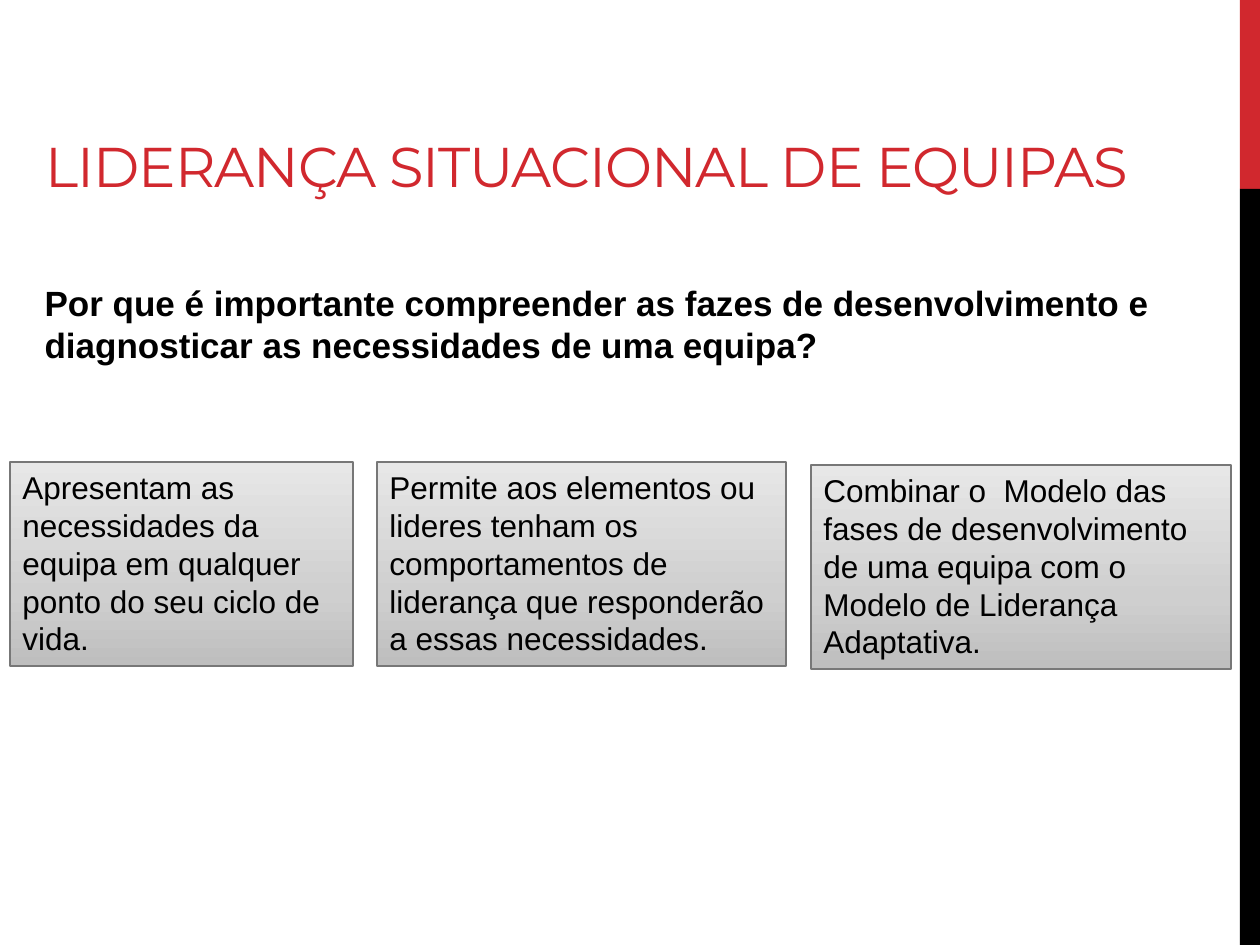
from copy import deepcopy

from pptx import Presentation, util as u
from pptx.dml.color import RGBColor
from pptx.enum import shapes, text as t
from pptx.oxml.ns import qn

PX = u.Inches(1) // 126

RED = RGBColor(0xD1, 0x28, 0x2E)
BLACK = RGBColor(0, 0, 0)
BORDER = RGBColor(0x77, 0x77, 0x77)
GRADIENT = (
    (0, RGBColor(0xBE, 0xBE, 0xBE)),
    (0.35, RGBColor(0xCF, 0xCF, 0xCF)),
    (1, RGBColor(0xE7, 0xE7, 0xE7)),
)

REASONS = (
    ((10, 462, 343, 204),
     "Apresentam as necessidades da equipa em qualquer ponto do seu ciclo de vida."),
    ((377, 462, 409, 204),
     "Permite aos elementos ou lideres tenham os comportamentos de liderança "
     "que responderão a essas necessidades."),
    ((811, 465, 420, 204),
     "Combinar o  Modelo das fases de desenvolvimento de uma equipa com o "
     "Modelo de Liderança Adaptativa."),
)


def px(*lengths):
    return [length * PX for length in lengths]


def write(holder, wording, size, font="Arial", color=BLACK, bold=False,
          anchor=t.MSO_ANCHOR.TOP, before=0, after=0, tracking=None):
    """Fill a shape or placeholder with one left-aligned, unbulleted paragraph."""
    frame = holder.text_frame
    frame.word_wrap = True
    frame.auto_size = t.MSO_AUTO_SIZE.NONE
    frame.vertical_anchor = anchor
    paragraph = frame.paragraphs[0]
    paragraph.alignment = t.PP_ALIGN.LEFT
    paragraph.space_before, paragraph.space_after = u.Pt(before), u.Pt(after)
    properties = paragraph._p.get_or_add_pPr()
    properties.set("marL", "0")
    properties.set("indent", "0")
    properties.append(properties.makeelement(qn("a:buNone"), {}))
    run = paragraph.add_run()
    run.text = wording
    run.font.name, run.font.size, run.font.bold = font, u.Pt(size), bold
    run.font.color.rgb = color
    if tracking is not None:
        run._r.get_or_add_rPr().set("spc", str(round(tracking * 100)))


def place(holder, box):
    holder.left, holder.top, holder.width, holder.height = px(*box)


def add_rectangle(slide, box):
    rectangle = slide.shapes.add_shape(shapes.MSO_SHAPE.RECTANGLE, *px(*box))
    rectangle.shadow.inherit = False
    return rectangle


def add_band(slide, box, color):
    band = add_rectangle(slide, box)
    band.fill.solid()
    band.fill.fore_color.rgb = color
    band.line.fill.background()


def add_reason(slide, box, wording):
    reason = add_rectangle(slide, box)
    reason.fill.gradient()
    reason.fill.gradient_angle = 90
    stop_list = next(reason._element.spPr.iter(qn("a:gsLst")))
    stop_list.append(deepcopy(stop_list[-1]))
    for stop, (position, color) in zip(reason.fill.gradient_stops, GRADIENT):
        stop.position = position
        stop.color.rgb = color
    reason.line.color.rgb = BORDER
    reason.line.width = u.Pt(1)
    write(reason, wording, 18)


def main():
    deck = Presentation()
    deck.slide_width, deck.slide_height = px(1260, 945)
    slide = deck.slides.add_slide(deck.slide_layouts[1])
    title, question = slide.placeholders

    add_band(slide, (1240, 0, 20, 189), RED)
    add_band(slide, (1240, 189, 20, 756), BLACK)

    place(title, (33, 16, 1137, 189))
    write(title, "LIDERANÇA SITUACIONAL DE EQUIPAS", 32, font="Montserrat",
          color=RED, anchor=t.MSO_ANCHOR.BOTTOM, tracking=-0.6)

    place(question, (32, 275, 1211, 132))
    write(question,
          "Por que é importante compreender as fazes de desenvolvimento e "
          "diagnosticar as necessidades de uma equipa?",
          20, bold=True, before=4, after=6)

    for box, wording in REASONS:
        add_reason(slide, box, wording)

    deck.save("out.pptx")


if __name__ == "__main__":
    main()
